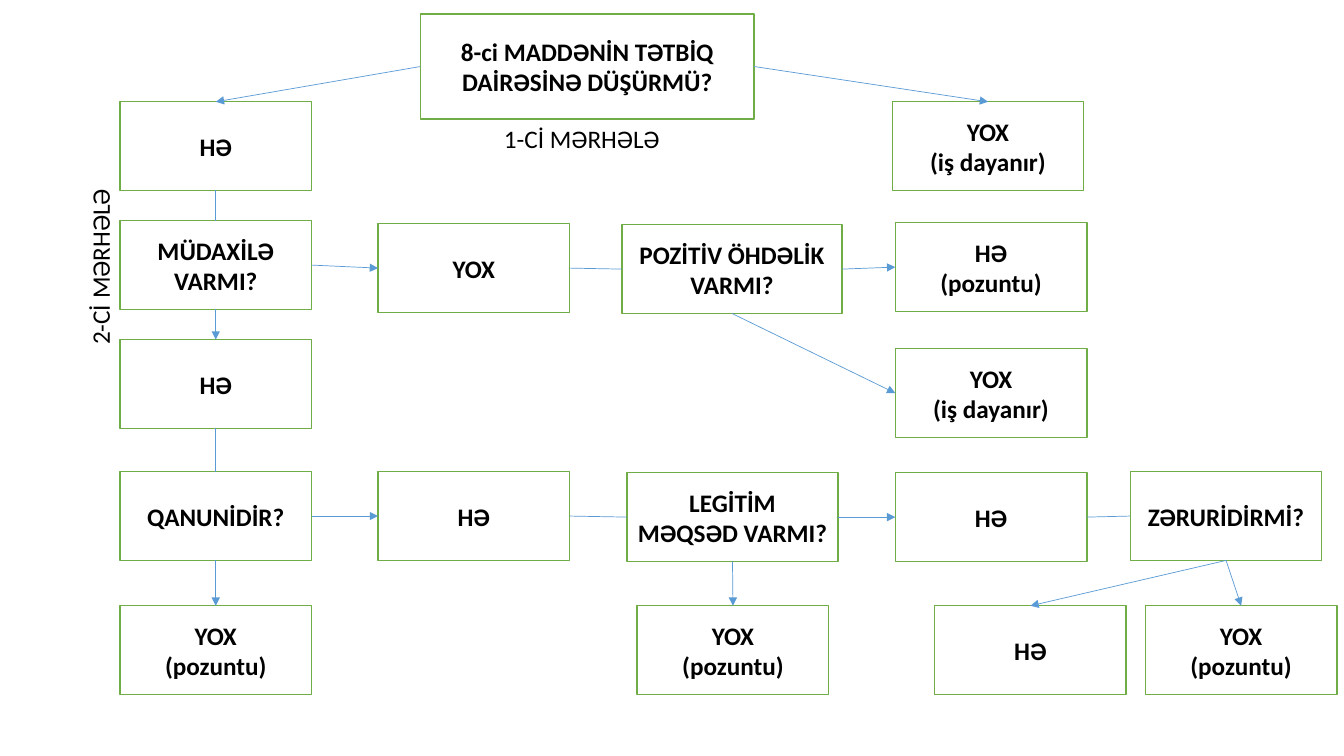
from dataclasses import dataclass

import pptx
import pptx.dml.color
import pptx.enum.shapes
import pptx.enum.text
import pptx.oxml
import pptx.oxml.ns
import pptx.util

Inches = pptx.util.Inches
RGBColor = pptx.dml.color.RGBColor
WHITE = RGBColor(0xFF, 0xFF, 0xFF)
BLACK = RGBColor(0x00, 0x00, 0x00)
GREEN = RGBColor(0x70, 0xAD, 0x47)
BLUE = RGBColor(0x5B, 0x9B, 0xD5)

TOP, LEFT, BOTTOM, RIGHT = range(4)
BOX_WIDTH, BOX_HEIGHT = 1.9, 0.88
FIRST, SECOND, FOURTH, FIFTH = 1.19, 3.75, 8.88, 11.21  # column left edges
START_ROW, LAWFUL_ROW, RESULT_ROW = 1.01, 4.68, 6.01  # row tops
FONT = {"name": "Calibri", "size": pptx.util.Pt(18)}


@dataclass
class Step:
    key: str
    text: str
    left: float
    top: float
    width: float = BOX_WIDTH
    height: float = BOX_HEIGHT


@dataclass
class Link:
    start: str
    start_side: int
    end: str
    end_side: int
    arrow: bool = True


@dataclass
class Label:
    text: str
    left: float
    top: float
    width: float
    rotation: int = 0


STEPS = [
    Step("scope", "8-ci MADDƏNİN TƏTBİQ DAİRƏSİNƏ DÜŞÜRMÜ?", 4.17, 0.14, 3.31, 1.04),
    Step("scope yes", "HƏ", FIRST, START_ROW),
    Step("scope no", "YOX\n(iş dayanır)", 8.85, START_ROW),
    Step("interference", "MÜDAXİLƏ VARMI?", FIRST, 2.19),
    Step("interference no", "YOX", SECOND, 2.22),
    Step("duty", "POZİTİV ÖHDƏLİK VARMI?", 6.17, 2.23, 2.18),
    Step("duty yes", "HƏ\n(pozuntu)", FOURTH, 2.21),
    Step("duty no", "YOX\n(iş dayanır)", FOURTH, 3.46),
    Step("interference yes", "HƏ", FIRST, 3.37),
    Step("lawful", "QANUNİDİR?", FIRST, LAWFUL_ROW),
    Step("lawful yes", "HƏ", SECOND, LAWFUL_ROW),
    Step("aim", "LEGİTİM MƏQSƏD VARMI?", 6.22, 4.69, 2.09),
    Step("aim yes", "HƏ", FOURTH, 4.69),
    Step("necessary", "ZƏRURİDİRMİ?", FIFTH, LAWFUL_ROW),
    Step("lawful no", "YOX\n(pozuntu)", FIRST, RESULT_ROW),
    Step("aim no", "YOX\n(pozuntu)", 6.32, RESULT_ROW),
    Step("necessary yes", "HƏ", 9.27, RESULT_ROW),
    Step("necessary no", "YOX\n(pozuntu)", 11.36, RESULT_ROW),
]

LINKS = [
    Link("scope", LEFT, "scope yes", TOP),
    Link("scope", RIGHT, "scope no", TOP),
    Link("scope yes", BOTTOM, "interference", TOP, arrow=False),
    Link("interference", RIGHT, "interference no", LEFT),
    Link("interference", BOTTOM, "interference yes", TOP),
    Link("interference no", RIGHT, "duty", LEFT, arrow=False),
    Link("duty", RIGHT, "duty yes", LEFT),
    Link("duty", BOTTOM, "duty no", LEFT),
    Link("interference yes", BOTTOM, "lawful", TOP, arrow=False),
    Link("lawful", RIGHT, "lawful yes", LEFT),
    Link("lawful", BOTTOM, "lawful no", TOP),
    Link("lawful yes", RIGHT, "aim", LEFT, arrow=False),
    Link("aim", RIGHT, "aim yes", LEFT),
    Link("aim", BOTTOM, "aim no", TOP),
    Link("aim yes", RIGHT, "necessary", LEFT, arrow=False),
    Link("necessary", BOTTOM, "necessary yes", TOP),
    Link("necessary", BOTTOM, "necessary no", TOP),
]

LABELS = [
    Label("1-Cİ MƏRHƏLƏ", 4.9, 1.17, 1.84),
    Label("2-Cİ MƏRHƏLƏ", 0.11, 2.44, 1.76, rotation=270),
]


def write_text(frame, text: str, alignment, bold: bool) -> None:
    frame.text = text
    for para in frame.paragraphs:
        para.alignment = alignment
        for span in para.runs:
            for attribute, value in {**FONT, "bold": bold}.items():
                setattr(span.font, attribute, value)
            span.font.color.rgb = BLACK


def draw_step(page, step: Step):
    box = page.shapes.add_shape(
        pptx.enum.shapes.MSO_SHAPE.RECTANGLE,
        Inches(step.left), Inches(step.top), Inches(step.width), Inches(step.height))
    box.shadow.inherit = False
    box.fill.solid()
    box.fill.fore_color.rgb = WHITE
    box.line.color.rgb = GREEN
    box.line.width = pptx.util.Pt(1)
    box.text_frame.word_wrap = True
    box.text_frame.vertical_anchor = pptx.enum.text.MSO_ANCHOR.MIDDLE
    write_text(box.text_frame, step.text, pptx.enum.text.PP_ALIGN.CENTER, bold=True)
    return box


def draw_link(page, link: Link, boxes: dict) -> None:
    line = page.shapes.add_connector(
        pptx.enum.shapes.MSO_CONNECTOR.STRAIGHT, 0, 0, 0, 0)
    line.begin_connect(boxes[link.start], link.start_side)
    line.end_connect(boxes[link.end], link.end_side)
    line.line.color.rgb = BLUE
    line.line.width = pptx.util.Pt(0.5)
    if link.arrow:
        head = pptx.oxml.parse_xml(
            f'<a:tailEnd {pptx.oxml.ns.nsdecls("a")} type="triangle"/>')
        line.line._get_or_add_ln().append(head)
    line._element.spPr.append(
        pptx.oxml.parse_xml(f'<a:effectLst {pptx.oxml.ns.nsdecls("a")}/>'))


def draw_label(page, label: Label) -> None:
    box = page.shapes.add_textbox(
        Inches(label.left), Inches(label.top), Inches(label.width), Inches(0.4))
    box.rotation = label.rotation
    box.text_frame.word_wrap = False
    box.text_frame.auto_size = pptx.enum.text.MSO_AUTO_SIZE.SHAPE_TO_FIT_TEXT
    write_text(box.text_frame, label.text, pptx.enum.text.PP_ALIGN.LEFT, bold=False)


def main() -> None:
    deck = pptx.Presentation()
    deck.slide_width, deck.slide_height = Inches(13.33), Inches(7.5)
    page = deck.slides.add_slide(deck.slide_layouts[6])

    # Decision boxes, the links between them, then the stage labels
    boxes = {step.key: draw_step(page, step) for step in STEPS}
    for link in LINKS:
        draw_link(page, link, boxes)
    for label in LABELS:
        draw_label(page, label)

    deck.save("out.pptx")


if __name__ == "__main__":
    main()
